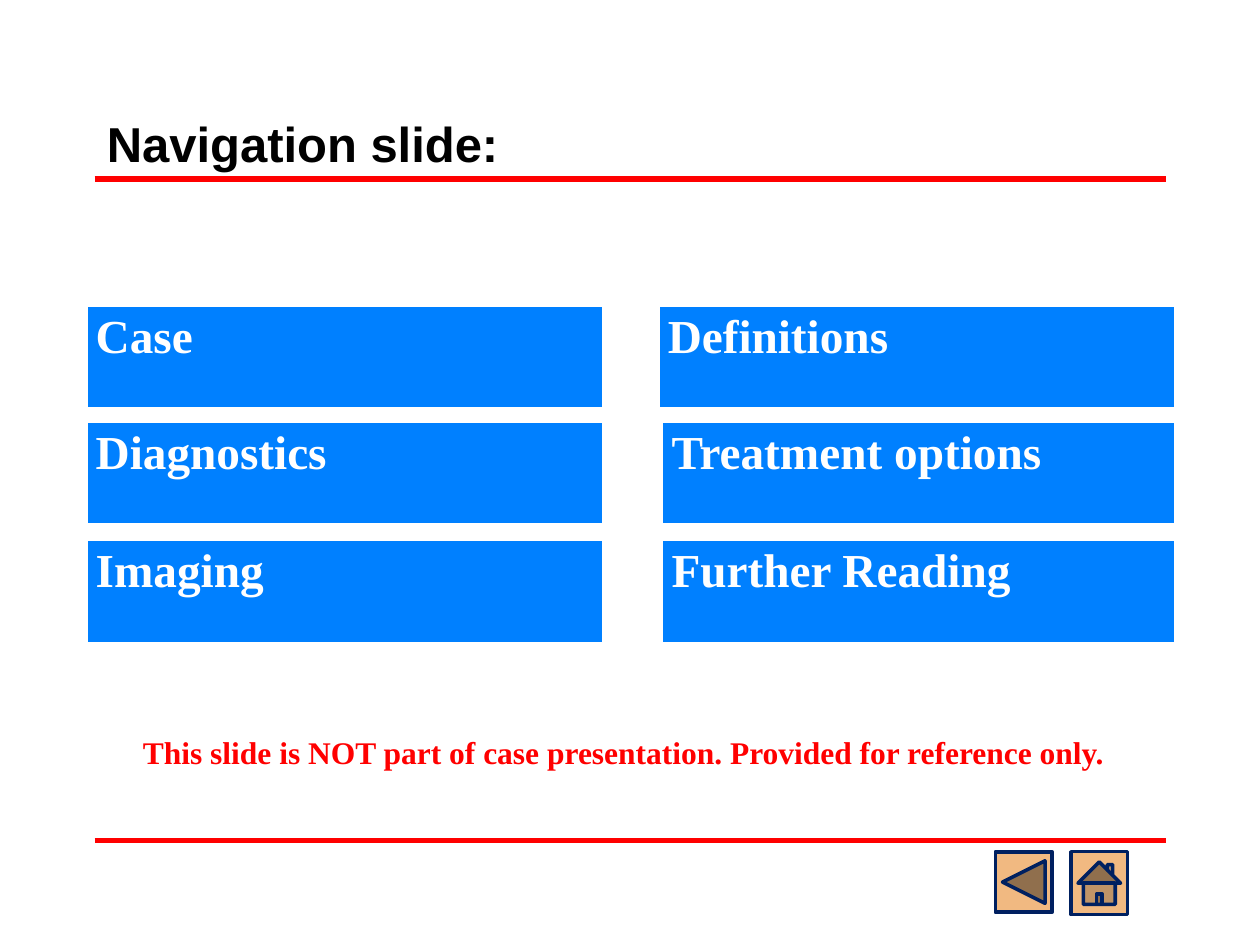
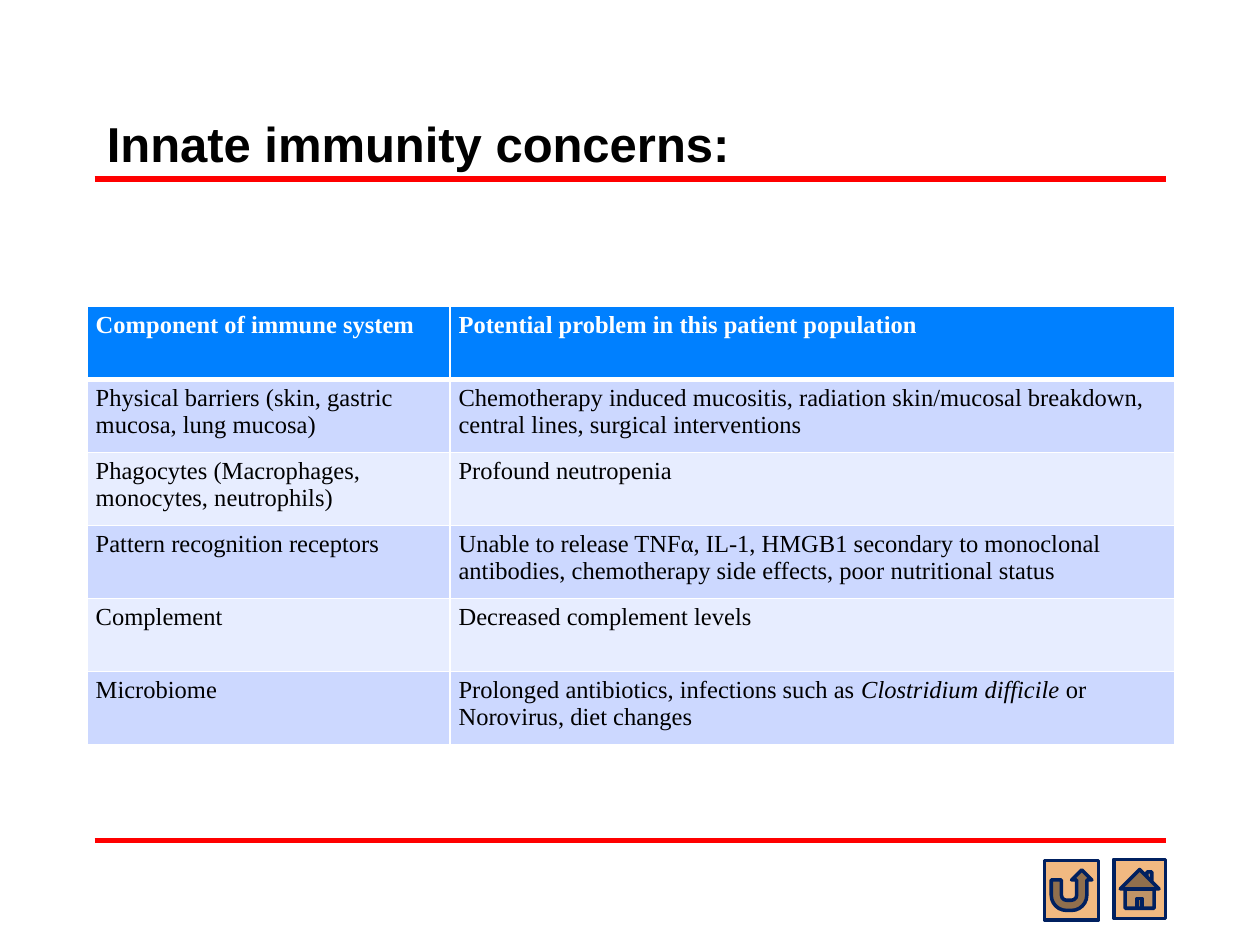
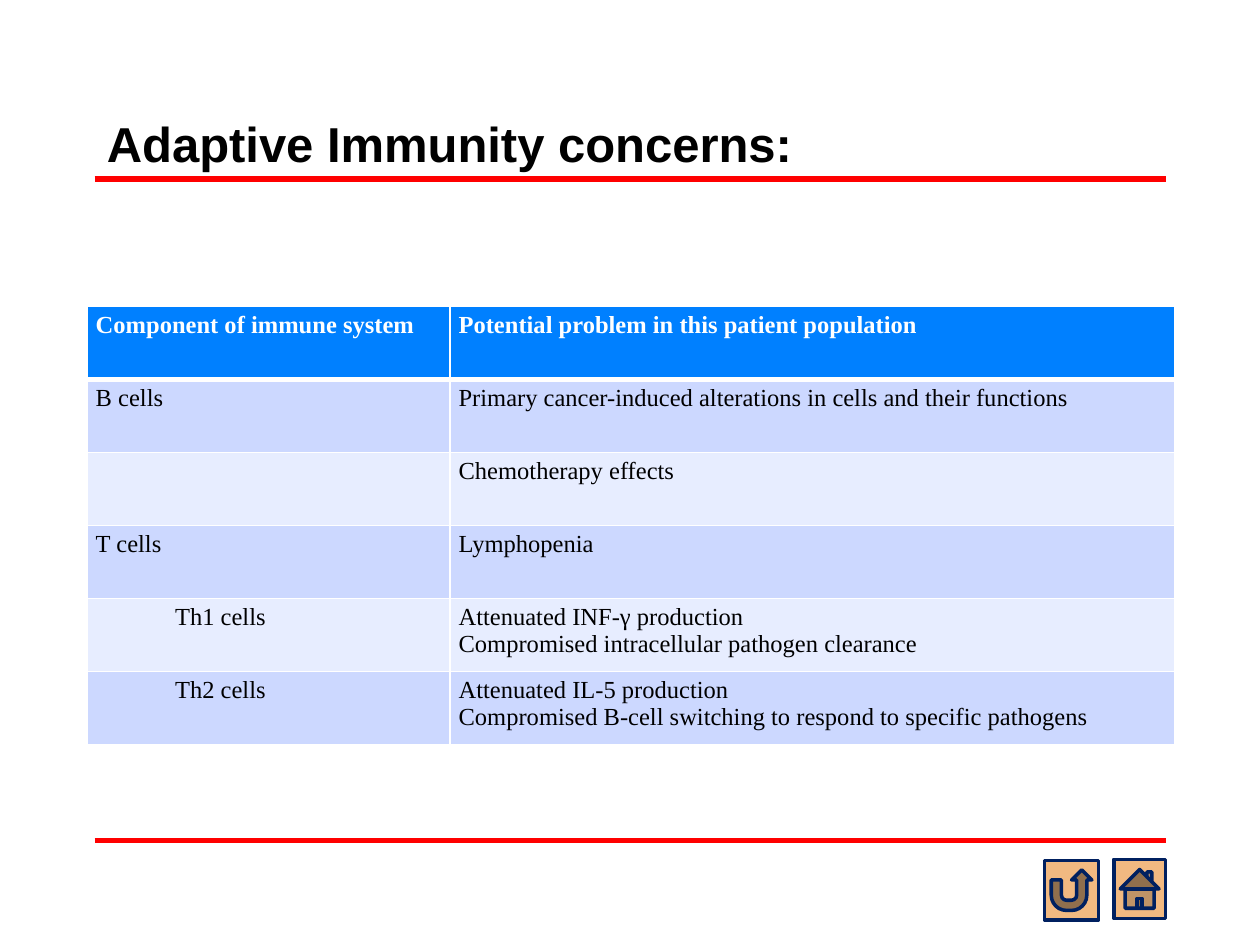
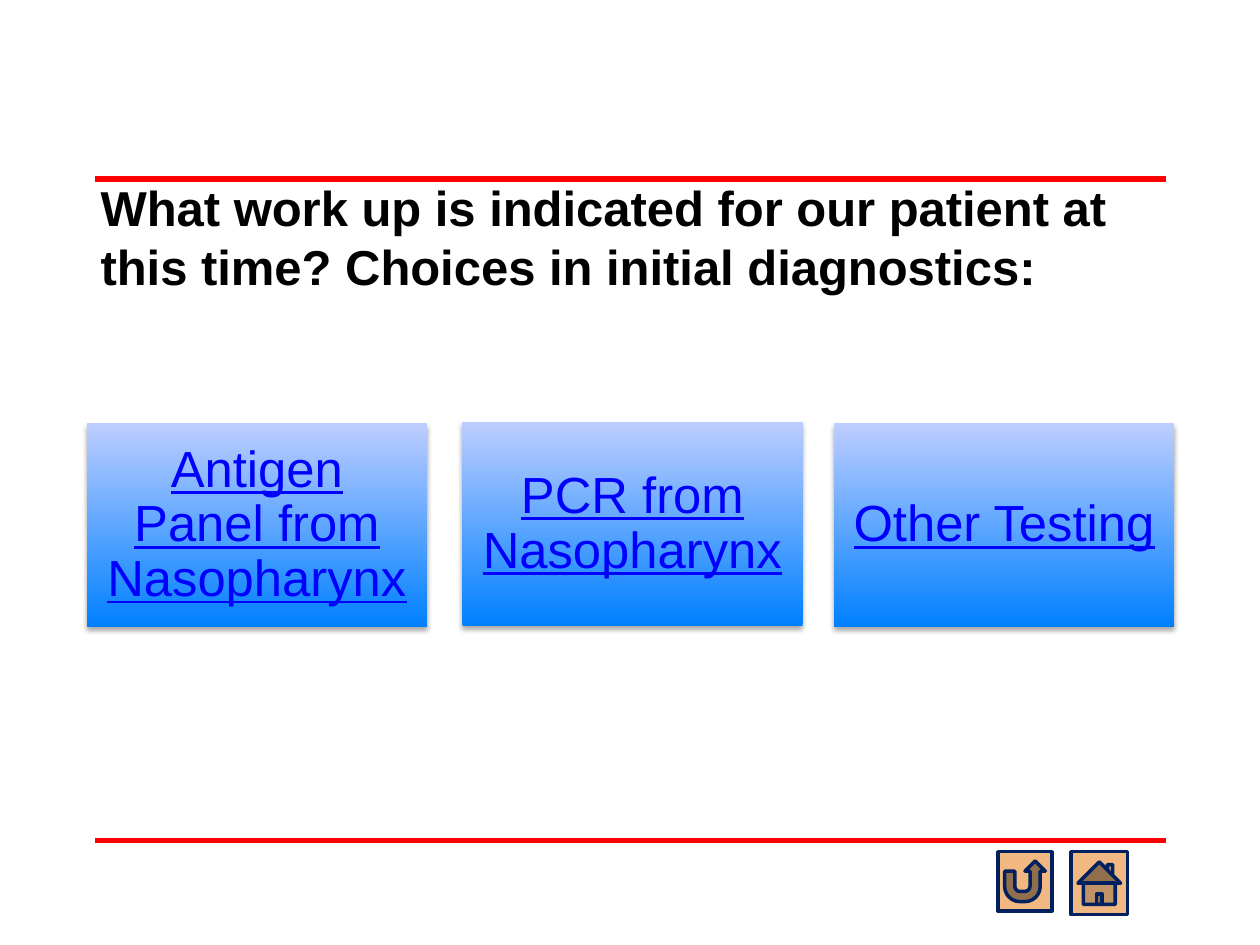
from lxml.etree import SubElement
from pptx import Presentation
from pptx.dml.color import RGBColor
from pptx.enum.shapes import MSO_CONNECTOR, MSO_SHAPE as Preset
from pptx.enum.text import MSO_ANCHOR as Anchor, PP_ALIGN as Align
from pptx.oxml.ns import qn
from pptx.util import Inches, Pt

# Shared look
BLACK = RGBColor(0x00, 0x00, 0x00)
WHITE = RGBColor(0xFF, 0xFF, 0xFF)
RED = RGBColor(0xFF, 0x00, 0x00)
HEADER_BLUE = RGBColor(0x00, 0x80, 0xFF)
LIGHT_BLUE = RGBColor(0xBD, 0xCD, 0xFF)
LINK_BLUE = RGBColor(0x00, 0x00, 0xFF)
BAND_DARK = RGBColor(0xCC, 0xD8, 0xFF)
BAND_LIGHT = RGBColor(0xE7, 0xED, 0xFF)
BUTTON_FILL = RGBColor(0xF1, 0xB9, 0x81)
BUTTON_LINE = RGBColor(0x00, 0x20, 0x60)
SANS, SERIF = "Arial", "Times New Roman"
TITLE_BOX = (0.75, 0.42, 8.5, 1)
RULE_TOPS = (1.42, 6.67)

# Content
TOPIC_TOPS = (2.43, 3.35, 4.29)
LEFT_TOPICS = ("Case", "Diagnostics", "Imaging")
RIGHT_TOPICS = (("Definitions", 5.23, 4.09), ("Treatment options", 5.26, 4.06),
                ("Further Reading", 5.26, 4.06))
TABLE_HEADER = ("Component of immune system",
                "Potential problem in this patient population")
# Asterisks enclose italics; a line break starts a new paragraph
INNATE_ROWS = (
    ("Physical barriers (skin, gastric mucosa, lung mucosa)",
     "Chemotherapy induced mucositis, radiation skin/mucosal breakdown, "
     "central lines, surgical interventions"),
    ("Phagocytes (Macrophages, monocytes, neutrophils)", "Profound neutropenia"),
    ("Pattern recognition receptors",
     "Unable to release TNFα, IL-1, HMGB1 secondary to monoclonal antibodies, "
     "chemotherapy side effects, poor nutritional status"),
    ("Complement", "Decreased complement levels"),
    ("Microbiome",
     "Prolonged antibiotics, infections such as *Clostridium difficile *"
     "or Norovirus, diet changes"),
)
ADAPTIVE_ROWS = (
    ("B cells", "Primary cancer-induced alterations in cells and their functions"),
    ("", "Chemotherapy effects"),
    ("T cells", "Lymphopenia"),
    ("Th1 cells",
     "Attenuated INF-γ production\nCompromised intracellular pathogen clearance"),
    ("Th2 cells",
     "Attenuated IL-5 production\n"
     "Compromised B-cell switching to respond to specific pathogens"),
)
SUBTYPES = ("Th1 cells", "Th2 cells")
TEST_CHOICES = (("Antigen Panel from Nasopharynx", 0.69, 3.36),
                ("PCR from Nasopharynx", 3.67, 3.35),
                ("Other Testing", 6.62, 3.36))


def inches(*lengths):
    return [Inches(length) for length in lengths]


def add_run(paragraph, text, size, color, name=SERIF, bold=False):
    run = paragraph.add_run()
    run.text = text
    font = run.font
    font.size, font.name, font.bold = Pt(size), name, bold
    font.color.rgb = color
    return run


def add_text(slide, box, text, size, color, name, anchor=Anchor.TOP, align=Align.LEFT):
    frame = slide.shapes.add_textbox(*inches(*box)).text_frame
    frame.word_wrap = True
    frame.vertical_anchor = anchor
    paragraph = frame.paragraphs[0]
    paragraph.alignment = align
    add_run(paragraph, text, size, color, name, bold=True)


def add_rule(slide, top):
    rule = slide.shapes.add_connector(
        MSO_CONNECTOR.STRAIGHT, *inches(0.75, top, 9.25, top))
    rule.line.color.rgb = RED
    rule.line.width = Pt(3)
    SubElement(rule._element.spPr, qn("a:effectLst"))


def add_base_slide(presentation, title, title_box=TITLE_BOX):
    slide = presentation.slides.add_slide(presentation.slide_layouts[6])
    for top in RULE_TOPS:
        add_rule(slide, top)
    add_text(slide, title_box, title, 28, BLACK, SANS, Anchor.BOTTOM)
    return slide


def add_button(slide, preset, box, rotation=0):
    button = slide.shapes.add_shape(preset, *inches(*box))
    button.shadow.inherit = False
    button.rotation = rotation
    button.fill.solid()
    button.fill.fore_color.rgb = BUTTON_FILL
    button.line.color.rgb = BUTTON_LINE
    button.line.width = Pt(2)


def style_cell(cell, fill, top_width, bottom_width):
    cell.margin_left = cell.margin_right = Inches(0.07)
    cell.margin_top = cell.margin_bottom = Inches(0.04)
    properties = cell._tc.get_or_add_tcPr()
    widths = {"a:lnL": 1, "a:lnR": 1, "a:lnT": top_width, "a:lnB": bottom_width}
    for side, width in widths.items():
        line = SubElement(properties, qn(side), w=str(Pt(width)))
        solid = SubElement(line, qn("a:solidFill"))
        SubElement(solid, qn("a:srgbClr"), val=str(WHITE))
    cell.fill.solid()
    cell.fill.fore_color.rgb = fill


def fill_cell(cell, text, size, color, bold):
    frame = cell.text_frame
    for index, line in enumerate(text.split("\n")):
        paragraph = frame.add_paragraph() if index else frame.paragraphs[0]
        if line in SUBTYPES:
            paragraph._p.get_or_add_pPr().set("marL", str(Inches(0.63)))
        for part, piece in enumerate(line.split("*")):
            if piece:
                run = add_run(paragraph, piece, size, color, bold=bold)
                run.font.italic = part % 2 == 1


def add_banded_table(slide, left, top, widths, row_height, rows, size):
    """First row is the header; the others alternate two tints."""
    table = slide.shapes.add_table(
        len(rows), len(widths),
        *inches(left, top, sum(widths), row_height * len(rows))).table
    for column, width in zip(table.columns, widths):
        column.width = Inches(width)
    for index, texts in enumerate(rows):
        table.rows[index].height = Inches(row_height)
        header = index == 0
        band = BAND_DARK if index % 2 else BAND_LIGHT
        for column, text in enumerate(texts):
            cell = table.cell(index, column)
            style_cell(cell, HEADER_BLUE if header else band,
                       3 if index == 1 else 1, 3 if header else 1)
            fill_cell(cell, text, size, WHITE if header else BLACK, header)


def add_choice(slide, text, left, top):
    choice = slide.shapes.add_shape(Preset.RECTANGLE, *inches(left, top, 2.7, 1.62))
    choice.fill.gradient()
    choice.fill.gradient_angle = 90
    for stop, color, position in zip(
            choice.fill.gradient_stops, (HEADER_BLUE, LIGHT_BLUE), (0, 1)):
        stop.color.rgb = color
        stop.position = position
    choice.line.fill.background()
    # Soft shadow straight below
    choice.shadow.inherit = False
    effects = choice._element.spPr.find(qn("a:effectLst"))
    shadow = SubElement(effects, qn("a:outerShdw"), blurRad=str(Pt(3.1)),
                        dist=str(Pt(1.8)), dir="5400000", rotWithShape="0")
    shade = SubElement(shadow, qn("a:srgbClr"), val=str(BLACK))
    SubElement(shade, qn("a:alpha"), val="35000")
    # Label
    frame = choice.text_frame
    frame.word_wrap = True
    frame.vertical_anchor = Anchor.MIDDLE
    frame.margin_left = frame.margin_right = Inches(0.12)
    frame.margin_top = frame.margin_bottom = Inches(0.12)
    paragraph = frame.paragraphs[0]
    paragraph.alignment = Align.CENTER
    paragraph.line_spacing = 0.9
    add_run(paragraph, text, 29, LINK_BLUE, SANS).font.underline = True


def add_navigation_slide(presentation):
    slide = add_base_slide(presentation, "Navigation slide:")
    for top, left_topic, (topic, left, width) in zip(
            TOPIC_TOPS, LEFT_TOPICS, RIGHT_TOPICS):
        add_banded_table(slide, 0.69, top, (4.09,), 0.82, ((left_topic,),), 27)
        add_banded_table(slide, left, top, (width,), 0.82, ((topic,),), 27)
    add_text(slide, (0.96, 5.77, 7.98, 0.4),
             "This slide is NOT part of case presentation. "
             "Provided for reference only.", 18, RED, SERIF, align=Align.CENTER)
    add_button(slide, Preset.ACTION_BUTTON_FORWARD_OR_NEXT,
               (7.9, 6.76, 0.45, 0.48), rotation=180)
    add_button(slide, Preset.ACTION_BUTTON_HOME, (8.5, 6.76, 0.45, 0.5))


def add_concerns_slide(presentation, title, rows):
    slide = add_base_slide(presentation, title)
    add_banded_table(slide, 0.69, 2.43, (2.88, 5.75), 0.58, (TABLE_HEADER, *rows), 14)
    add_button(slide, Preset.ACTION_BUTTON_HOME, (8.84, 6.82, 0.41, 0.47))
    add_button(slide, Preset.ACTION_BUTTON_RETURN, (8.29, 6.83, 0.43, 0.47))


def add_diagnostics_slide(presentation):
    slide = add_base_slide(
        presentation,
        "What work up is indicated for our patient at this time? "
        "Choices in initial diagnostics:", (0.7, 1.3, 8.62, 1.09))
    for text, left, top in TEST_CHOICES:
        add_choice(slide, text, left, top)
    add_button(slide, Preset.ACTION_BUTTON_HOME, (8.5, 6.76, 0.45, 0.5))
    add_button(slide, Preset.ACTION_BUTTON_RETURN, (7.92, 6.76, 0.43, 0.47))


def main():
    presentation = Presentation()
    presentation.slide_width, presentation.slide_height = inches(10, 7.5)
    add_navigation_slide(presentation)
    add_concerns_slide(presentation, "Innate immunity concerns:", INNATE_ROWS)
    add_concerns_slide(presentation, "Adaptive Immunity concerns:", ADAPTIVE_ROWS)
    add_diagnostics_slide(presentation)
    presentation.save("out.pptx")


if __name__ == "__main__":
    main()
